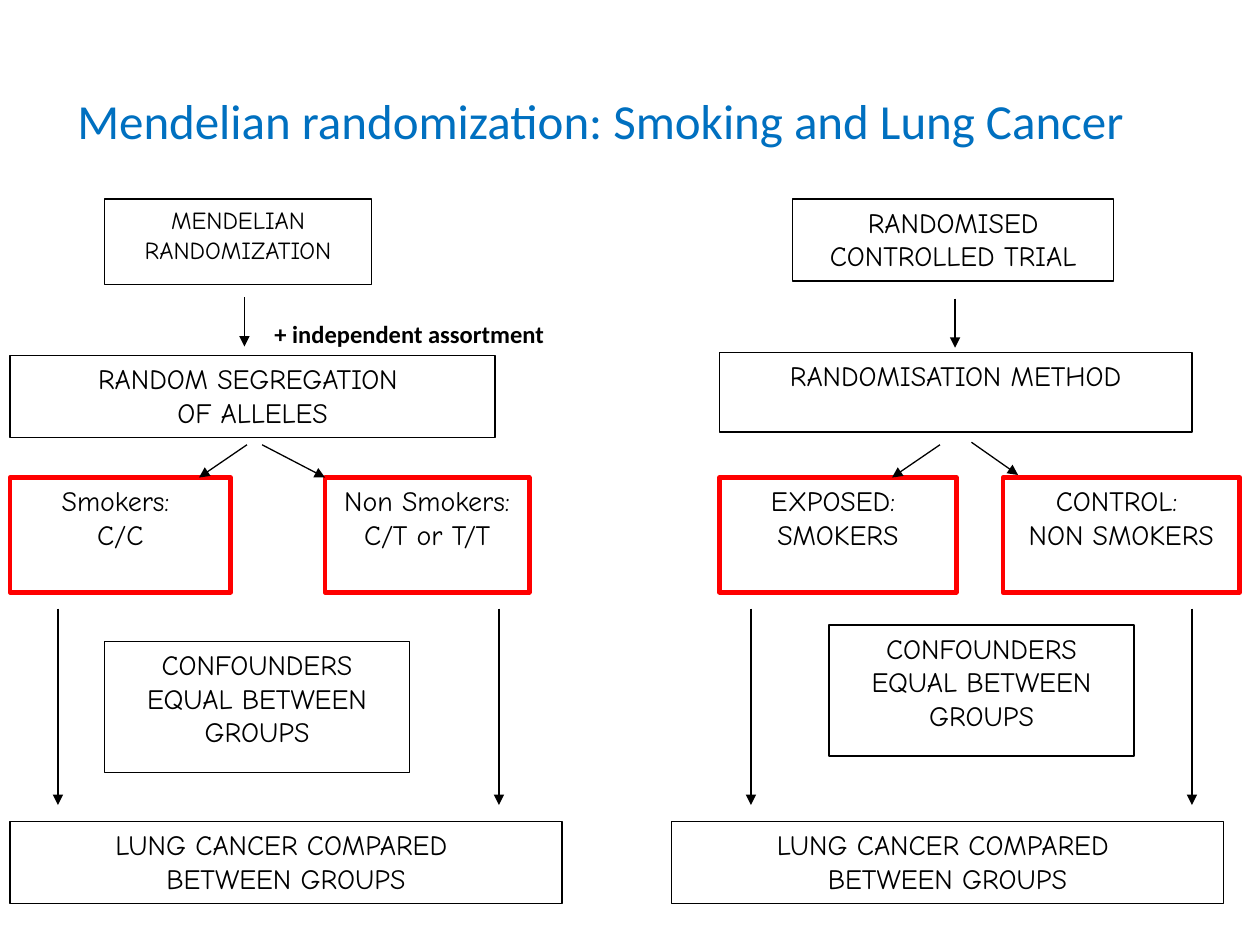
from lxml import etree
from pptx import Presentation
from pptx.dml.color import RGBColor
from pptx.enum.shapes import MSO_CONNECTOR, MSO_SHAPE
from pptx.enum.text import MSO_ANCHOR, PP_ALIGN
from pptx.oxml.ns import qn
from pptx.util import Inches, Pt

RECTANGLE = MSO_SHAPE.RECTANGLE
STRAIGHT = MSO_CONNECTOR.STRAIGHT
CENTER, LEFT = PP_ALIGN.CENTER, PP_ALIGN.LEFT
TOP, MIDDLE = MSO_ANCHOR.TOP, MSO_ANCHOR.MIDDLE

BLACK, WHITE, RED, BLUE = "000000", "FFFFFF", "FF0000", "0070C0"
STEP_FONT = {"name": "Comic Neue", "size": Pt(16)}
ORIGIN_FONT = {"name": "Comic Neue", "size": Pt(14)}
TITLE_FONT = {"name": "Calibri", "size": Pt(28)}
NOTE_FONT = {"name": "Calibri", "size": Pt(14), "bold": True}

TITLE = "Mendelian randomization: Smoking and Lung Cancer"
CONFOUNDERS = ["CONFOUNDERS EQUAL BETWEEN GROUPS"]
OUTCOME = ["LUNG CANCER COMPARED ", "BETWEEN GROUPS"]

STEPS = [
    (0.83, 1.58, 2.12, 0.68, ["MENDELIAN RANDOMIZATION"], ORIGIN_FONT),
    (6.29, 1.58, 2.55, 0.65, ["RANDOMISED CONTROLLED TRIAL"], STEP_FONT),
    (0.08, 2.82, 3.85, 0.65, ["RANDOM SEGREGATION ", "OF ALLELES"], STEP_FONT),
    (5.71, 2.8, 3.75, 0.63, ["RANDOMISATION METHOD"], STEP_FONT),
    (0.83, 5.09, 2.42, 1.04, CONFOUNDERS, STEP_FONT),
    (6.58, 4.96, 2.42, 1.04, CONFOUNDERS, STEP_FONT),
    (0.08, 6.52, 4.38, 0.65, OUTCOME, STEP_FONT),
    (5.33, 6.52, 4.38, 0.65, OUTCOME, STEP_FONT),
]
GROUPS = [
    (0.08, 1.75, ["Smokers: ", "C/C"]),
    (2.58, 1.62, ["Non Smokers:", "C/T or T/T"]),
    (5.71, 1.88, ["EXPOSED: ", "SMOKERS"]),
    (7.96, 1.88, ["CONTROL: ", "NON SMOKERS"]),
]
SPLIT_ARROWS = [
    (1.94, 2.36, 1.94, 2.75),
    (7.58, 2.37, 7.58, 2.76),
    (1.96, 3.53, 1.58, 3.79),
    (2.08, 3.53, 2.58, 3.79),
    (7.46, 3.53, 7.08, 3.79),
    (7.71, 3.51, 8.08, 3.77),
]
FOLLOW_UP_X = [0.46, 3.96, 5.96, 9.46]


def rgb(value):
    """Turn a hex string into a colour."""
    return RGBColor.from_string(value)


def write_lines(frame, lines, font, color=BLACK, align=CENTER):
    """Write one paragraph per line with the given font values."""
    for index, line in enumerate(lines):
        paragraph = frame.paragraphs[0] if index == 0 else frame.add_paragraph()
        paragraph.alignment = align
        run = paragraph.add_run()
        run.text = line
        for attribute, value in font.items():
            setattr(run.font, attribute, value)
        run.font.color.rgb = rgb(color)


def add_box(slide, left, top, width, height, lines, font, border=BLACK, weight=0.75):
    """Add a white bordered rectangle with centred text."""
    box = slide.shapes.add_shape(
        RECTANGLE, Inches(left), Inches(top), Inches(width), Inches(height))
    box.shadow.inherit = False
    box.fill.solid()
    box.fill.fore_color.rgb = rgb(WHITE)
    box.line.color.rgb = rgb(border)
    box.line.width = Pt(weight)
    box.text_frame.word_wrap = True
    box.text_frame.vertical_anchor = TOP
    write_lines(box.text_frame, lines, font)


def add_label(slide, left, top, width, height, text, font, color, align, anchor, wrap):
    """Add a line of text without a border."""
    label = slide.shapes.add_textbox(
        Inches(left), Inches(top), Inches(width), Inches(height))
    label.text_frame.word_wrap = wrap
    label.text_frame.vertical_anchor = anchor
    write_lines(label.text_frame, [text], font, color, align)


def add_arrow(slide, start_x, start_y, end_x, end_y):
    """Add a thin black arrow with a triangle at its end."""
    arrow = slide.shapes.add_connector(
        STRAIGHT, Inches(start_x), Inches(start_y), Inches(end_x), Inches(end_y))
    arrow.line.color.rgb = rgb(BLACK)
    arrow.line.width = Pt(0.75)
    etree.SubElement(arrow.line._get_or_add_ln(), qn("a:tailEnd"), type="triangle")
    etree.SubElement(arrow._element.spPr, qn("a:effectLst"))


def main():
    """Build the slide and save it."""
    deck = Presentation()
    deck.slide_width, deck.slide_height = Inches(10), Inches(7.5)
    slide = deck.slides.add_slide(deck.slide_layouts[6])

    add_label(slide, 0.28, 0.33, 8.97, 1.25, TITLE, TITLE_FONT, BLUE, CENTER, MIDDLE, True)
    for step in STEPS:
        add_box(slide, *step)
    for left, width, lines in GROUPS:
        add_box(slide, left, 3.79, width, 0.91, lines, STEP_FONT, RED, 2.75)
    for ends in SPLIT_ARROWS:
        add_arrow(slide, *ends)
    for x in FOLLOW_UP_X:
        add_arrow(slide, x, 4.83, x, 6.39)
    add_label(slide, 2.08, 2.48, 2.36, 0.34, "+ independent assortment",
              NOTE_FONT, BLACK, LEFT, TOP, False)

    deck.save("out.pptx")


if __name__ == "__main__":
    main()
